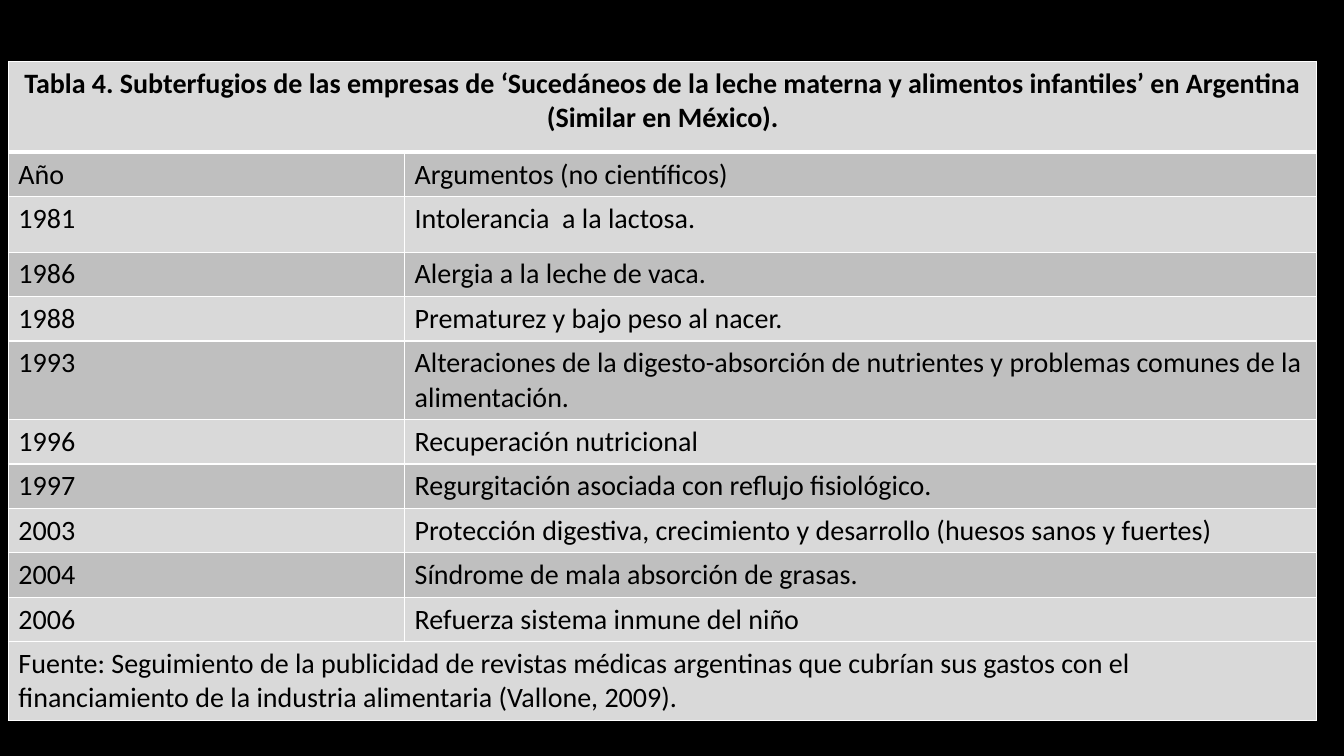
from lxml.etree import SubElement
from pptx import Presentation
from pptx.dml.color import RGBColor
from pptx.enum.shapes import MSO_SHAPE
from pptx.enum.text import PP_ALIGN
from pptx.oxml.ns import qn
from pptx.util import Pt

COLORS = {
    "background": "000000",
    "text": "000000",
    "border": "FFFFFF",
    "light": "D9D9D9",
    "dark": "BFBFBF",
}
FONT = "Calibri"
FONT_SIZE = 20
SLIDE_WIDTH, SLIDE_HEIGHT = 960, 540

TITLE = (
    "Tabla 4. Subterfugios de las empresas de ‘Sucedáneos de la leche materna "
    "y alimentos infantiles’ en Argentina (Similar en México)."
)
ARGUMENTS = [
    ("Año", "Argumentos (no científicos)"),
    ("1981", "Intolerancia  a la lactosa."),
    ("1986", "Alergia a la leche de vaca."),
    ("1988", "Prematurez y bajo peso al nacer."),
    ("1993", "Alteraciones de la digesto-absorción de nutrientes y problemas "
             "comunes de la alimentación."),
    ("1996", "Recuperación nutricional"),
    ("1997", "Regurgitación asociada con reflujo fisiológico."),
    ("2003", "Protección digestiva, crecimiento y desarrollo (huesos sanos y fuertes)"),
    ("2004", "Síndrome de mala absorción de grasas."),
    ("2006", "Refuerza sistema inmune del niño"),
]
SOURCE = (
    "Fuente: Seguimiento de la publicidad de revistas médicas argentinas que cubrían "
    "sus gastos con el financiamiento de la industria alimentaria (Vallone, 2009)."
)

# Table geometry
LEFT, TOP, HEIGHT = 6, 44, 464.4
COLUMN_WIDTHS = [283, 651.6]
ROW_HEIGHTS = [64.8, 29.5, 39.6] + [29.5] * 8 + [18]


def color(name):
    return RGBColor.from_string(COLORS[name])


def add_backdrop(slide):
    shape = slide.shapes.add_shape(
        MSO_SHAPE.RECTANGLE, Pt(0), Pt(0), Pt(SLIDE_WIDTH), Pt(SLIDE_HEIGHT))
    shape.shadow.inherit = False
    shape.fill.solid()
    shape.fill.fore_color.rgb = color("background")
    shape.line.fill.background()


def set_borders(cell, top=1, bottom=1):
    properties = cell._tc.get_or_add_tcPr()
    for side, width in (("L", 1), ("R", 1), ("T", top), ("B", bottom)):
        line = SubElement(properties, qn(f"a:ln{side}"), w=str(Pt(width)))
        fill = SubElement(line, qn("a:solidFill"))
        SubElement(fill, qn("a:srgbClr"), val=COLORS["border"])


def fill_cell(cell, fill_name):
    cell.fill.solid()
    cell.fill.fore_color.rgb = color(fill_name)


def write_cell(cell, text, bold=False, alignment=PP_ALIGN.LEFT):
    paragraph = cell.text_frame.paragraphs[0]
    paragraph.alignment = alignment
    run = paragraph.add_run()
    run.text = text
    run.font.name = FONT
    run.font.size = Pt(FONT_SIZE)
    run.font.bold = bold
    run.font.color.rgb = color("text")


def add_arguments_table(slide):
    last_row = len(ROW_HEIGHTS) - 1
    frame = slide.shapes.add_table(
        len(ROW_HEIGHTS), len(COLUMN_WIDTHS),
        Pt(LEFT), Pt(TOP), Pt(sum(COLUMN_WIDTHS)), Pt(HEIGHT))
    table = frame.table
    for column, width in zip(table.columns, COLUMN_WIDTHS):
        column.width = Pt(width)

    # Banded rows, with a thick rule under the title
    for index, (row, height) in enumerate(zip(table.rows, ROW_HEIGHTS)):
        row.height = Pt(height)
        banded = index % 2 == 1 and index != last_row
        for cell in row.cells:
            set_borders(cell, top=3 if index == 1 else 1, bottom=3 if index == 0 else 1)
            fill_cell(cell, "dark" if banded else "light")
    frame.height = Pt(HEIGHT)

    # Title and source span both columns
    for index in (0, last_row):
        table.cell(index, 0).merge(table.cell(index, 1))
    write_cell(table.cell(0, 0), TITLE, bold=True, alignment=PP_ALIGN.CENTER)
    write_cell(table.cell(last_row, 0), SOURCE)

    # Years and arguments
    for row_index, texts in enumerate(ARGUMENTS, start=1):
        for column_index, text in enumerate(texts):
            write_cell(table.cell(row_index, column_index), text)


def main():
    presentation = Presentation()
    presentation.slide_width = Pt(SLIDE_WIDTH)
    presentation.slide_height = Pt(SLIDE_HEIGHT)
    slide = presentation.slides.add_slide(presentation.slide_layouts[6])
    add_backdrop(slide)
    add_arguments_table(slide)
    presentation.save("out.pptx")


if __name__ == "__main__":
    main()
